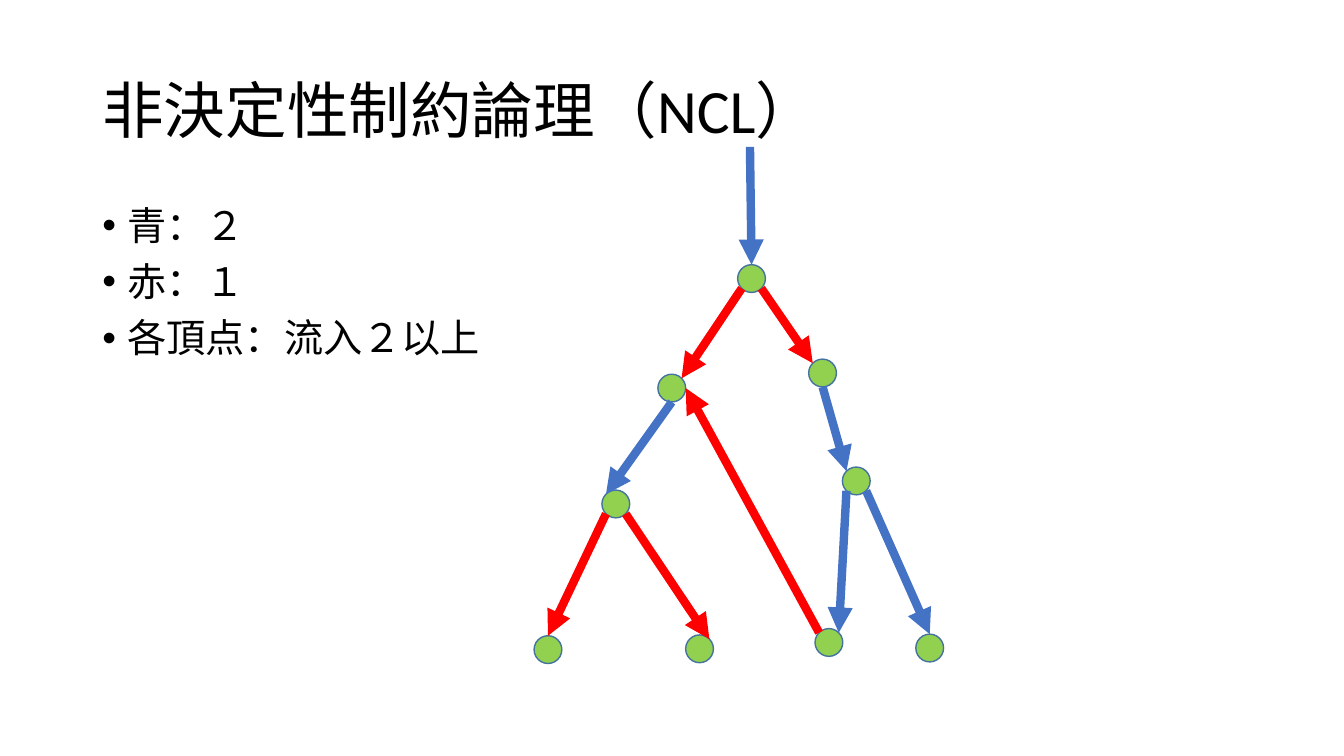
from math import cos, radians, sin

from lxml import etree
from pptx import Presentation
from pptx.dml.color import RGBColor
from pptx.enum.shapes import MSO_CONNECTOR, MSO_SHAPE
from pptx.enum.text import MSO_ANCHOR
from pptx.oxml.ns import qn
from pptx.util import Cm, Pt

STRAIGHT = MSO_CONNECTOR.STRAIGHT
OVAL = MSO_SHAPE.OVAL
TOP, MIDDLE = MSO_ANCHOR.TOP, MSO_ANCHOR.MIDDLE

FONT = "Calibri"
BLACK, BLUE, RED = "000000", "4472C4", "FF0000"
GREEN, OUTLINE = "92D050", "43739E"

NODE_SIZE = 0.7
# Node centres in cm, from the corner of the graph's box
NODES = {
    "root": (5.48, 3.32),
    "left": (3.47, 6.08),
    "right": (7.27, 5.7),
    "left_child": (2.06, 9.0),
    "right_child": (8.12, 8.42),
    "leaf1": (0.35, 12.67),
    "leaf2": (4.17, 12.65),
    "leaf3": (7.43, 12.49),
    "leaf4": (9.97, 12.63),
}
# Points on a node's rim, in degrees clockwise from the right
RIM = {"R": 0, "BR": 45, "B": 90, "BL": 135, "TL": 225, "T": 270, "TR": 315}
EDGES = [
    ("root", "BL", "left", "TR", RED),
    ("root", "BR", "right", "TL", RED),
    ("left", "B", "left_child", "TL", BLUE),
    ("right", "B", "right_child", "TL", BLUE),
    ("left_child", "BL", "leaf1", "T", RED),
    ("left_child", "BR", "leaf2", "TR", RED),
    ("right_child", "BL", "leaf3", "TR", BLUE),
    ("right_child", "BR", "leaf4", "T", BLUE),
    ("leaf3", "TL", "left", "R", RED),
]
ENTRY_START = (5.44, 0)


def color(hex_string):
    return RGBColor.from_string(hex_string)


def add_text(slide, box, lines, size, anchor):
    frame = slide.shapes.add_textbox(*(Cm(v) for v in box)).text_frame
    frame.word_wrap = True
    frame.vertical_anchor = anchor
    frame.text = "\n".join(lines)
    for paragraph in frame.paragraphs:
        paragraph.line_spacing = 0.9
        font = paragraph.runs[0].font
        font.size, font.name = Pt(size), FONT
        font.color.rgb = color(BLACK)
    return frame


def add_title(slide, box):
    add_text(slide, box, ["非決定性制約論理（NCL）"], 44, MIDDLE)


def add_rules(slide, box):
    lines = ["青：２", "赤：１", "各頂点：流入２以上"]
    for paragraph in add_text(slide, box, lines, 28, TOP).paragraphs:
        paragraph.space_before = Pt(10)
        properties = paragraph._p.get_or_add_pPr()
        properties.set("marL", str(Cm(0.635)))
        properties.set("indent", str(-Cm(0.635)))
        etree.SubElement(properties, qn("a:buFont")).set("typeface", "Arial")
        etree.SubElement(properties, qn("a:buChar")).set("char", "•")


def add_arrow(slide, start, end, hex_string):
    arrow = slide.shapes.add_connector(STRAIGHT, *(Cm(v) for v in (*start, *end)))
    arrow.line.color.rgb = color(hex_string)
    arrow.line.width = Pt(6)
    etree.SubElement(arrow.line._get_or_add_ln(), qn("a:tailEnd")).set("type", "triangle")
    etree.SubElement(arrow._element.spPr, qn("a:effectLst"))


def add_graph(slide, left, top):
    radius = NODE_SIZE / 2

    def rim_point(node, side):
        x, y = NODES[node]
        angle = radians(RIM[side])
        return left + x + radius * cos(angle), top + y + radius * sin(angle)

    # Vertices
    for x, y in NODES.values():
        vertex = slide.shapes.add_shape(
            OVAL, Cm(left + x - radius), Cm(top + y - radius), Cm(NODE_SIZE), Cm(NODE_SIZE))
        vertex.shadow.inherit = False
        vertex.fill.solid()
        vertex.fill.fore_color.rgb = color(GREEN)
        vertex.line.color.rgb = color(OUTLINE)
        vertex.line.width = Pt(1)

    # Arrow into the root, then the directed edges
    entry = (left + ENTRY_START[0], top + ENTRY_START[1])
    add_arrow(slide, entry, rim_point("root", "T"), BLUE)
    for source, source_side, target, target_side, hex_string in EDGES:
        add_arrow(slide, rim_point(source, source_side),
                  rim_point(target, target_side), hex_string)


def main():
    presentation = Presentation()
    presentation.slide_width, presentation.slide_height = Cm(33.87), Cm(19.05)
    slide = presentation.slides.add_slide(presentation.slide_layouts[6])
    add_title(slide, (2.33, 1.01, 29.21, 3.68))
    add_rules(slide, (2.33, 5.07, 29.21, 12.09))
    add_graph(slide, 13.46, 3.7)
    presentation.save("out.pptx")


if __name__ == "__main__":
    main()
